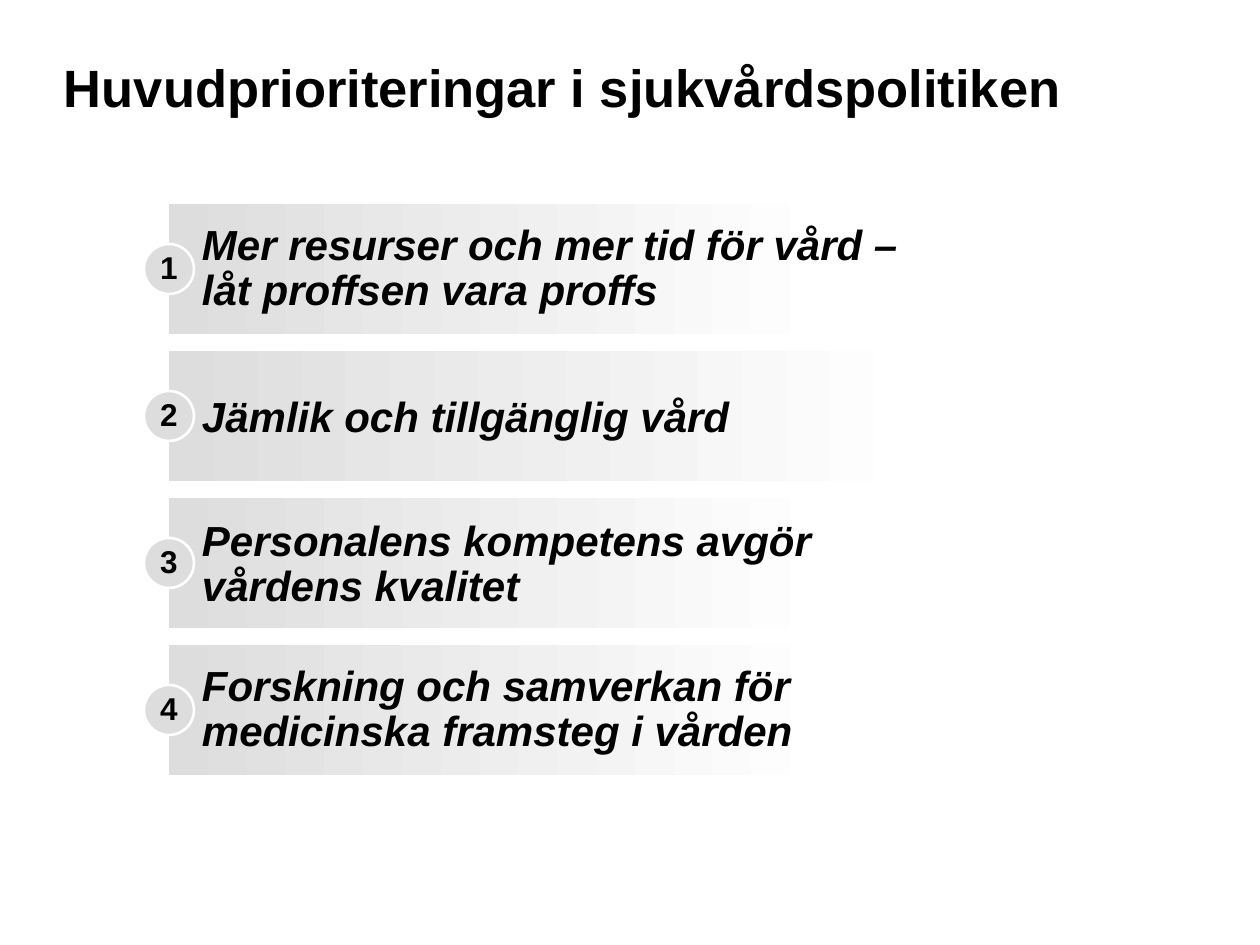
from dataclasses import dataclass

from pptx import Presentation
from pptx.dml.color import RGBColor
from pptx.enum.shapes import MSO_SHAPE as Shape
from pptx.enum.text import MSO_ANCHOR as Anchor, MSO_AUTO_SIZE as AutoSize, PP_ALIGN as Align
from pptx.util import Emu, Pt

EMU_PER_PX = 914400 / 126


@dataclass(frozen=True)
class Theme:
    font: str = "Arial"
    ink: RGBColor = RGBColor(0x00, 0x00, 0x00)
    grey: RGBColor = RGBColor(0xDD, 0xDD, 0xDD)
    white: RGBColor = RGBColor(0xFF, 0xFF, 0xFF)
    title_size: int = 30
    item_size: int = 24
    number_size: int = 18


THEME = Theme()

# Rows: band left, first top, height and distance from row to row
BAND_LEFT, ROW_TOP, ROW_HEIGHT, ROW_PITCH = 169, 204, 130, 147
BADGE_SIZE = 50
TEXT_LEFT = 202

# Text, band width, text width, text offset in the row, text height
PRIORITIES = [
    ("Mer resurser och mer tid för vård – låt proffsen vara proffs", 660, 700, 20, 91),
    ("Jämlik och tillgänglig vård", 748, 646, 45, 45),
    ("Personalens kompetens avgör vårdens kvalitet", 660, 776, 22, 91),
    ("Forskning och samverkan för medicinska framsteg i vården", 660, 805, 20, 91),
]


def px(n):
    return Emu(round(n * EMU_PER_PX))


def box(*lengths):
    return [px(n) for n in lengths]


def set_text(sp, text, *, size, italic=False, align=Align.LEFT, spacing=0.9,
             wrap=True, margin=0, auto_size=AutoSize.SHAPE_TO_FIT_TEXT):
    tf = sp.text_frame
    tf.word_wrap = wrap
    tf.auto_size = auto_size
    tf.vertical_anchor = Anchor.MIDDLE
    tf.margin_left = tf.margin_right = tf.margin_top = tf.margin_bottom = px(margin)
    p = tf.paragraphs[0]
    p.alignment = align
    p.line_spacing = spacing
    r = p.add_run()
    r.text = text
    r.font.name = THEME.font
    r.font.size = Pt(size)
    r.font.bold = True
    r.font.italic = italic
    r.font.color.rgb = THEME.ink


def add_title(slide, text):
    sp = slide.shapes.title
    sp.left, sp.top, sp.width, sp.height = box(64, 64, 1144, 54)
    set_text(sp, text, size=THEME.title_size, spacing=0.85)


def add_band(slide, top, width):
    sp = slide.shapes.add_shape(Shape.RECTANGLE, *box(BAND_LEFT, top, width, ROW_HEIGHT))
    sp.shadow.inherit = False
    sp.line.fill.background()
    sp.fill.gradient()
    sp.fill.gradient_angle = 0
    for stop, color in zip(sp.fill.gradient_stops, (THEME.grey, THEME.white)):
        stop.color.rgb = color


def add_badge(slide, top, number):
    # Centred on the left edge of the band
    left = BAND_LEFT - BADGE_SIZE // 2
    top += (ROW_HEIGHT - BADGE_SIZE) // 2
    sp = slide.shapes.add_shape(Shape.OVAL, *box(left, top, BADGE_SIZE, BADGE_SIZE))
    sp.shadow.inherit = False
    sp.fill.solid()
    sp.fill.fore_color.rgb = THEME.grey
    sp.line.color.rgb = THEME.white
    sp.line.width = Pt(1.5)
    set_text(sp, str(number), size=THEME.number_size, align=Align.CENTER,
             wrap=False, margin=6, auto_size=AutoSize.NONE)


def add_item(slide, top, text, width, height):
    sp = slide.shapes.add_textbox(*box(TEXT_LEFT, top, width, height))
    set_text(sp, text, size=THEME.item_size, italic=True)


def main():
    prs = Presentation()
    prs.slide_width, prs.slide_height = box(1260, 945)
    slide = prs.slides.add_slide(prs.slide_layouts[5])
    add_title(slide, "Huvudprioriteringar i sjukvårdspolitiken")

    # Numbered priorities
    for i, (text, band_width, text_width, offset, height) in enumerate(PRIORITIES):
        top = ROW_TOP + i * ROW_PITCH
        add_band(slide, top, band_width)
        add_badge(slide, top, i + 1)
        add_item(slide, top + offset, text, text_width, height)

    prs.save("out.pptx")


if __name__ == "__main__":
    main()
